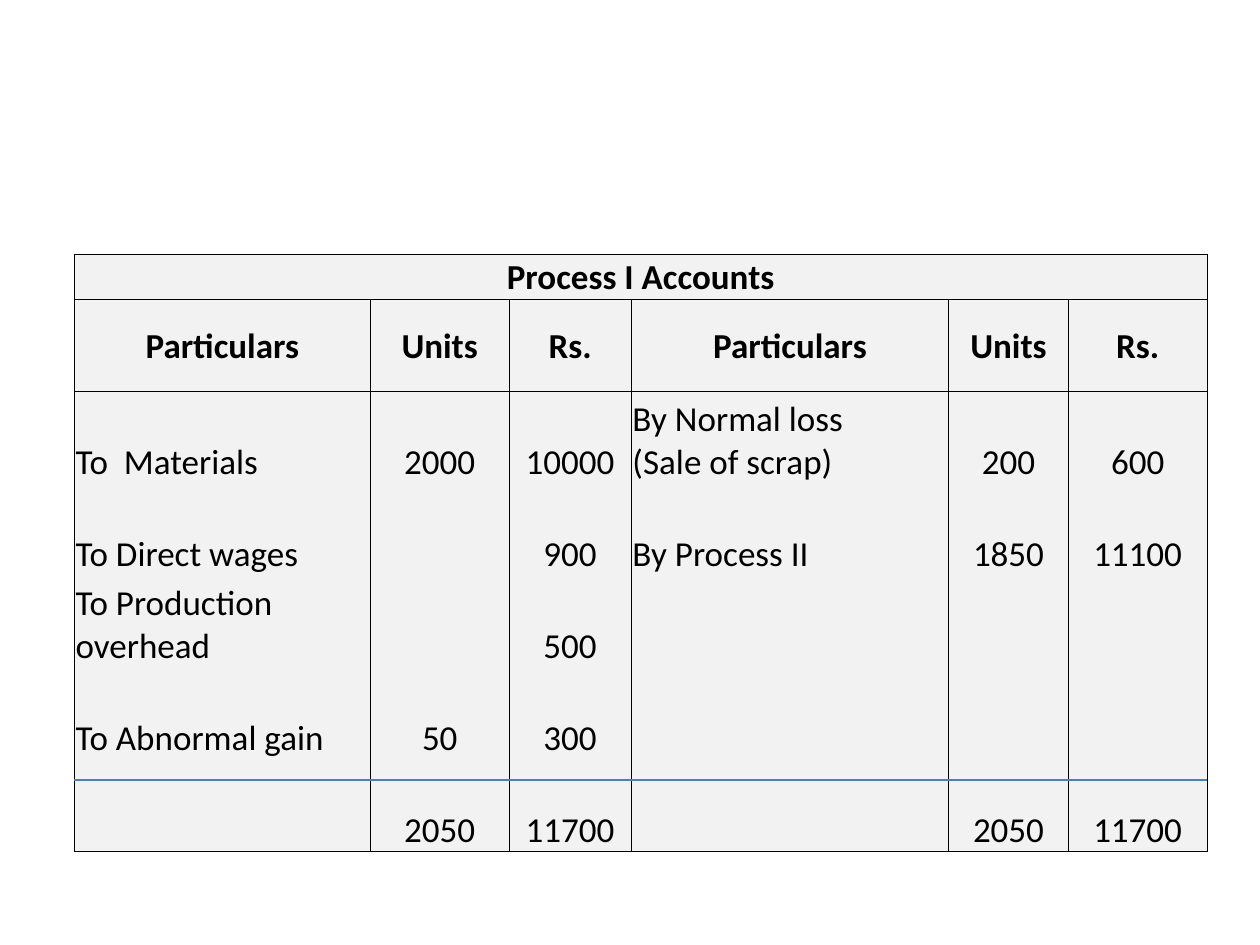
import pptx
import pptx.util
import pptx.dml.color
import pptx.enum.shapes
import pptx.enum.text
import pptx.oxml.ns
from lxml import etree
from pptx.util import Inches

BLACK = pptx.dml.color.RGBColor(0x00, 0x00, 0x00)
GREY = pptx.dml.color.RGBColor(0xF2, 0xF2, 0xF2)
BLUE = pptx.dml.color.RGBColor(0x4B, 0x7E, 0xBC)

COL_WIDTHS = [2.35, 1.1, 0.97, 2.52, 0.95, 1.1]
TITLE_HEIGHT, ROW_HEIGHT = 0.36, 0.73
TEXT_COLS = (0, 3)
ROWS = [
    ["Process I Accounts", "", "", "", "", ""],
    ["Particulars", "Units", "Rs.", "Particulars", "Units", "Rs."],
    ["To  Materials", "2000", "10000", "By Normal loss\n(Sale of scrap)", "200", "600"],
    ["To Direct wages", "", "900", "By Process II", "1850", "11100"],
    ["To Production overhead", "", "500", "", "", ""],
    ["To Abnormal gain", "50", "300", "", "", ""],
    ["", "2050", "11700", "", "2050", "11700"],
]


def set_borders(cell, sides):
    tcPr = cell._tc.get_or_add_tcPr()
    for side in "LRTB":
        ln = etree.SubElement(tcPr, pptx.oxml.ns.qn(f"a:ln{side}"))
        if side in sides:
            ln.set("w", str(pptx.util.Pt(0.5)))
            fill = etree.SubElement(ln, pptx.oxml.ns.qn("a:solidFill"))
            etree.SubElement(fill, pptx.oxml.ns.qn("a:srgbClr"), val=str(BLACK))
        else:
            etree.SubElement(ln, pptx.oxml.ns.qn("a:noFill"))


def format_cell(cell, text, header, centred, sides):
    set_borders(cell, sides)
    cell.fill.solid()
    cell.fill.fore_color.rgb = GREY
    cell.margin_left = cell.margin_right = cell.margin_top = Inches(0.01)
    cell.margin_bottom = 0
    anchor = pptx.enum.text.MSO_ANCHOR
    cell.vertical_anchor = anchor.MIDDLE if header else anchor.BOTTOM
    cell.text_frame.text = text
    align = pptx.enum.text.PP_ALIGN
    for p in cell.text_frame.paragraphs:
        p.alignment = align.CENTER if centred else align.LEFT
        p.font.size = pptx.util.Pt(20)
        for r in p.runs:
            r.font.name = "Calibri"
            r.font.size = pptx.util.Pt(20)
            r.font.bold = header
            r.font.color.rgb = BLACK


def add_account_table(slide, left, top, width, height):
    table = slide.shapes.add_table(
        len(ROWS), len(COL_WIDTHS), left, top, width, height).table
    table.first_row = table.horz_banding = False
    for column, col_width in zip(table.columns, COL_WIDTHS):
        column.width = Inches(col_width)
    last = len(ROWS) - 1
    for i, texts in enumerate(ROWS):
        table.rows[i].height = Inches(ROW_HEIGHT if i else TITLE_HEIGHT)
        header = i < 2
        sides = "LR" + ("T" if i <= 2 else "") + ("B" if header or i == last else "")
        for j, text in enumerate(texts):
            format_cell(table.cell(i, j), text, header,
                        header or j not in TEXT_COLS, sides)
    table.cell(0, 0).merge(table.cell(0, len(COL_WIDTHS) - 1))


def add_total_rule(slide, left, top, width):
    line = slide.shapes.add_connector(
        pptx.enum.shapes.MSO_CONNECTOR.STRAIGHT, left, top, left + width, top)
    line.line.color.rgb = BLUE
    line.line.width = pptx.util.Pt(0.75)
    etree.SubElement(line._element.spPr, pptx.oxml.ns.qn("a:effectLst"))


def main():
    prs = pptx.Presentation()
    prs.slide_width, prs.slide_height = Inches(10), Inches(7.5)
    slide = prs.slides.add_slide(prs.slide_layouts[6])
    left, width = Inches(0.59), Inches(sum(COL_WIDTHS))
    height = Inches(TITLE_HEIGHT + ROW_HEIGHT * (len(ROWS) - 1))
    add_account_table(slide, left, Inches(2.02), width, height)
    add_total_rule(slide, left, Inches(6.19), width)
    prs.save("out.pptx")


if __name__ == "__main__":
    main()
